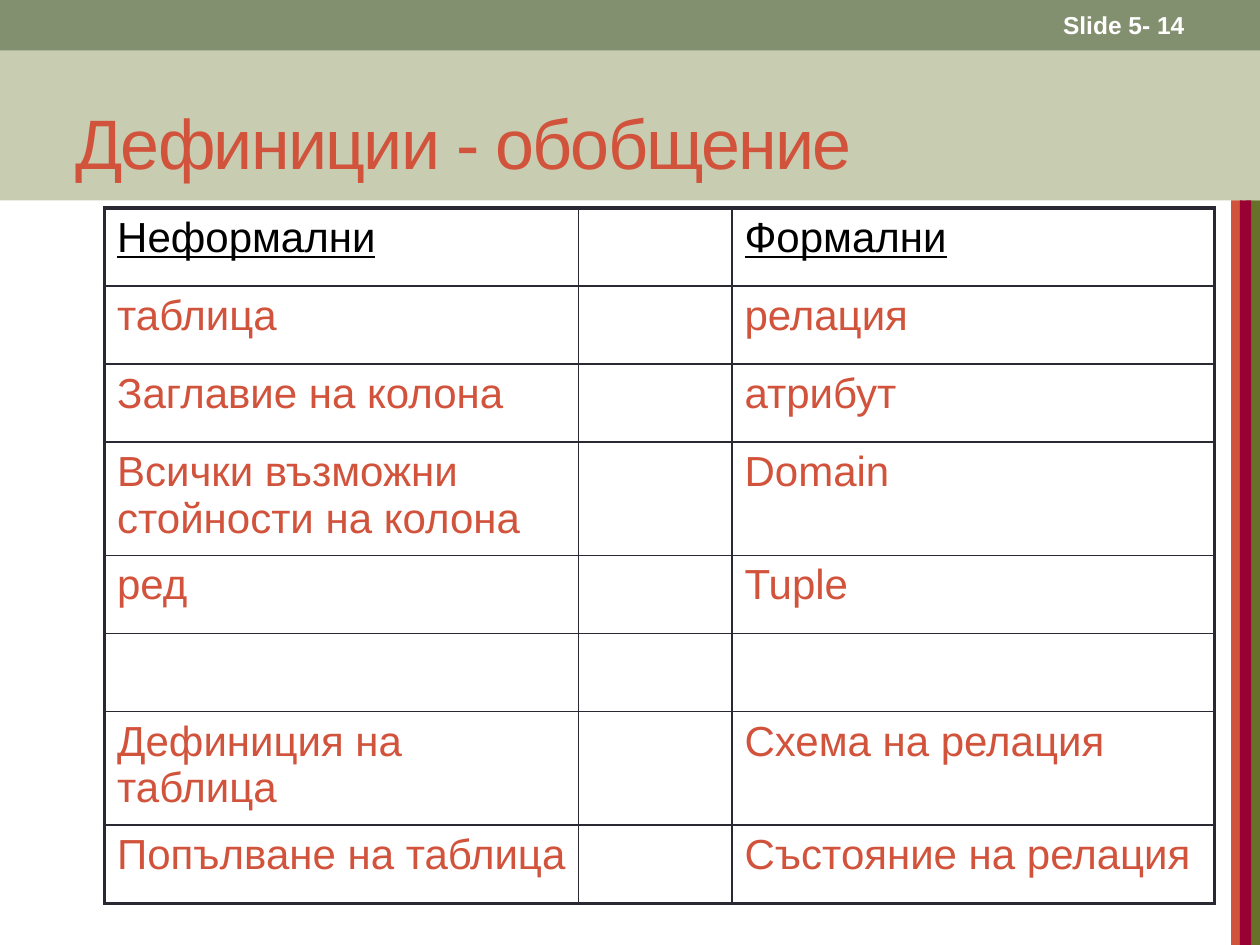
import pptx
import pptx.util
import pptx.dml.color
import pptx.enum.shapes
import pptx.enum.text
import pptx.oxml.ns
from lxml import etree

Inches, Pt = pptx.util.Inches, pptx.util.Pt
qn = pptx.oxml.ns.qn
Align = pptx.enum.text.PP_ALIGN
Anchor = pptx.enum.text.MSO_ANCHOR

WIDE, HIGH = 10, 7.5
BAND = 1.59  # bottom of the title band
COLORS = {
    "sage": "93A299", "olive": "677228", "red": "D2533C",
    "wine": "990033", "line": "292934", "white": "FFFFFF", "black": "000000",
}
TITLE = "Дефиниции - обобщение"
NUMBER = "Slide 5- 14"
TERMS = [
    ("Неформални", "Формални"),
    ("таблица", "релация"),
    ("Заглавие на колона", "атрибут"),
    ("Всички възможни стойности на колона", "Domain"),
    ("ред", "Tuple"),
    ("", ""),
    ("Дефиниция на таблица", "Схема на релация"),
    ("Попълване на таблица", "Състояние на релация"),
]
COLS = (3.76, 1.22, 3.83)
ROW = 0.62
STRIPES = [  # left, width, colour
    (9.89, 0.11, "olive"), (9.77, 0.09, "red"), (9.84, 0.09, "wine"),
]
HEAD = {"size": Pt(24), "underline": True}
BODY = {"size": Pt(24), "underline": False}


def rgb(name):
    return pptx.dml.color.RGBColor.from_string(COLORS[name])


def place(*box):
    return [Inches(part) for part in box]


def bar(box, color, alpha=None):
    """Draw a plain rectangle; alpha is its opacity in percent."""
    shape = slide.shapes.add_shape(
        pptx.enum.shapes.MSO_SHAPE.RECTANGLE, *place(*box))
    shape.shadow.inherit = False
    shape.line.fill.background()
    shape.fill.solid()
    shape.fill.fore_color.rgb = rgb(color)
    if alpha:
        tint = shape.fill._xPr.find(".//" + qn("a:srgbClr"))
        etree.SubElement(tint, qn("a:alpha"), val=str(alpha * 1000))


def write(frame, text, color, form, align=Align.LEFT):
    para = frame.paragraphs[0]
    para.alignment = align
    run = para.add_run()
    run.text = text
    run.font.name = "Arial"
    run.font.color.rgb = rgb(color)
    for key, value in form.items():
        setattr(run.font, key, value)
    return run


def label(box, text, color, form, align=Align.LEFT):
    frame = slide.shapes.add_textbox(*place(*box)).text_frame
    frame.word_wrap = True
    frame.vertical_anchor = Anchor.MIDDLE
    return write(frame, text, color, form, align)


def edge(cell, widths):
    """Give the cell its left, right, top and bottom border, in points."""
    props = cell._tc.get_or_add_tcPr()
    for spot, (side, width) in enumerate(zip("LRTB", widths)):
        line = etree.Element(qn("a:ln" + side), w=str(int(Pt(width))))
        fill = etree.SubElement(line, qn("a:solidFill"))
        etree.SubElement(fill, qn("a:srgbClr"), val=COLORS["line"])
        props.insert(spot, line)


deck = pptx.Presentation()
deck.slide_width, deck.slide_height = place(WIDE, HIGH)
slide = deck.slides.add_slide(deck.slide_layouts[6])

bar((0, 0, WIDE, 0.4), "sage")
for left, width, color in STRIPES:
    bar((left, BAND, width, HIGH - BAND), color)
bar((0, 0, WIDE, BAND), "olive", 36)

title = label((0.5, 0.58, 9, 1.08), TITLE, "red", {"size": Pt(40)})
title.font._element.set("spc", "-100")
label((8.33, 0.02, 1.17, 0.36), NUMBER, "white",
      {"size": Pt(14), "bold": True}, Align.RIGHT)

count = len(TERMS)
table = slide.shapes.add_table(
    count, len(COLS), *place(0.83, 1.65, sum(COLS), count * ROW)).table
table.first_row = table.horz_banding = False
for col, width in zip(table.columns, COLS):
    col.width = Inches(width)
for r, (plain, formal) in enumerate(TERMS):
    table.rows[r].height = Inches(ROW)
    for c, text in enumerate((plain, "", formal)):
        cell = table.cell(r, c)
        cell.fill.background()
        outer = (c == 0, c == len(COLS) - 1, r == 0, r == count - 1)
        edge(cell, [2.25 if out else 1 for out in outer])
        if text:
            write(cell.text_frame, text, "red" if r else "black",
                  BODY if r else HEAD)

deck.save("out.pptx")
